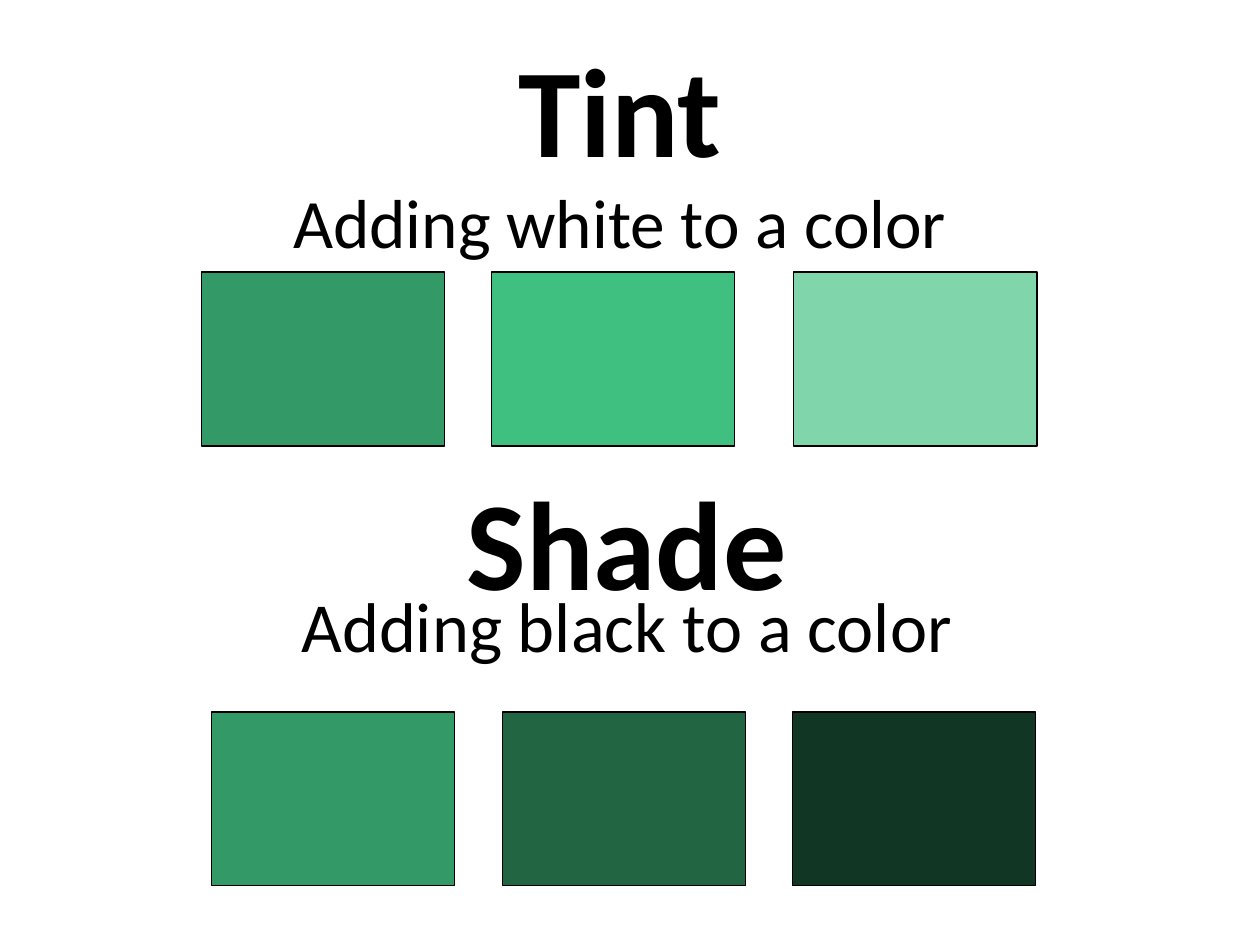
import dataclasses

import pptx
import pptx.dml.color
import pptx.enum.shapes
import pptx.enum.text
import pptx.util

Inches = pptx.util.Inches
Pt = pptx.util.Pt


@dataclasses.dataclass(frozen=True)
class Theme:
    font: str = "Calibri"
    ink: str = "000000"
    base: str = "339966"
    tints: tuple = ("40C080", "81D5AB")
    shades: tuple = ("216543", "123624")
    term_size: float = 72
    tint_note_size: float = 39.6
    shade_note_size: float = 40.2
    outline: float = 0.75


def rgb(value):
    return pptx.dml.color.RGBColor.from_string(value)


def add_text(paragraph, text, *, font, size, color, bold=False):
    run = paragraph.add_run()
    run.text = text
    run.font.name = font
    run.font.size = Pt(size)
    run.font.bold = bold
    run.font.color.rgb = rgb(color)


class SlideBuilder:
    def __init__(self, slide, theme):
        self.slide = slide
        self.theme = theme

    def definition(self, term, note, note_size, box, spacing, bottom_inset):
        """A large bold term with its meaning on the next line."""
        theme = self.theme
        frame = self.slide.shapes.add_textbox(*map(Inches, box)).text_frame
        frame.word_wrap = True
        frame.vertical_anchor = pptx.enum.text.MSO_ANCHOR.MIDDLE
        frame.margin_top = 0
        frame.margin_bottom = Inches(bottom_inset)
        paragraph = frame.paragraphs[0]
        paragraph.alignment = pptx.enum.text.PP_ALIGN.CENTER
        paragraph.line_spacing = spacing
        add_text(paragraph, term, font=theme.font, size=theme.term_size,
                 color=theme.ink, bold=True)
        paragraph.add_line_break()
        add_text(paragraph, note, font=theme.font, size=note_size,
                 color=theme.ink)

    def swatch(self, left, top, color):
        swatch = self.slide.shapes.add_shape(
            pptx.enum.shapes.MSO_SHAPE.RECTANGLE,
            Inches(left), Inches(top), Inches(1.93), Inches(1.38))
        swatch.shadow.inherit = False
        swatch.fill.solid()
        swatch.fill.fore_color.rgb = rgb(color)
        swatch.line.color.rgb = rgb(self.theme.ink)
        swatch.line.width = Pt(self.theme.outline)

    def swatch_row(self, lefts, top, colors):
        for left, color in zip(lefts, colors):
            self.swatch(left, top, color)


def main():
    presentation = pptx.Presentation()
    presentation.slide_width = Inches(10)
    presentation.slide_height = Inches(7.5)
    theme = Theme()
    slide = presentation.slides.add_slide(presentation.slide_layouts[6])
    builder = SlideBuilder(slide, theme)

    # Tint: the base color growing lighter
    builder.definition("Tint", "Adding white to a color", theme.tint_note_size,
                       box=(0.61, 0.75, 8.62, 1.45), spacing=0.94,
                       bottom_inset=0.5)
    builder.swatch_row((1.6, 3.9, 6.3), 2.16, (theme.base, *theme.tints))

    # Shade: the base color growing darker
    builder.definition("Shade", "Adding black to a color", theme.shade_note_size,
                       box=(0.61, 3.91, 8.73, 1.75), spacing=0.63,
                       bottom_inset=0.23)
    builder.swatch_row((1.68, 3.99, 6.29), 5.65, (theme.base, *theme.shades))

    presentation.save("out.pptx")


if __name__ == "__main__":
    main()
